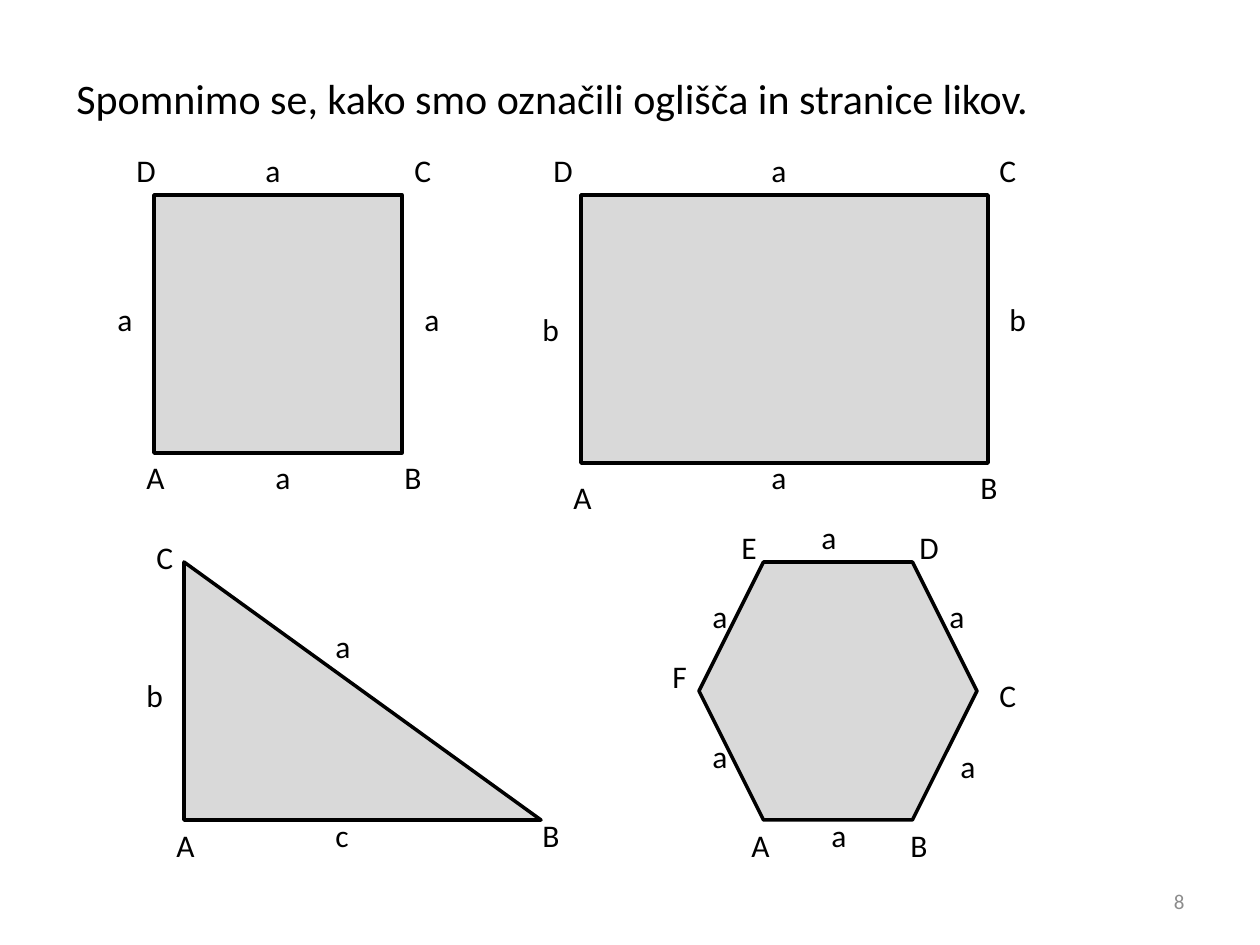
"""Build a slide that recalls how vertices and sides of plane figures are labelled."""
from dataclasses import dataclass

from pptx import Presentation
from pptx.dml.color import RGBColor
from pptx.enum.shapes import MSO_SHAPE as Shape
from pptx.enum.text import MSO_ANCHOR as Anchor, MSO_AUTO_SIZE as AutoSize, PP_ALIGN as Align
from pptx.util import Emu, Pt


@dataclass(frozen=True)
class Theme:
    font: str = "Calibri"
    ink: str = "000000"
    fill: str = "D9D9D9"
    muted: str = "8C8C8C"
    title_size: int = 24
    label_size: int = 18
    number_size: int = 12
    outline: int = 2


THEME = Theme()
PAGE_SIZE = (1260, 945)
PX_PER_INCH = 126
LABEL_HEIGHT = 50
LABEL_WIDTHS = {"A": 44, "B": 43, "C": 43, "D": 45, "E": 40, "F": 40, "a": 40, "b": 43, "c": 39}

TITLE = ("Spomnimo se, kako smo označili oglišča in stranice likov.", (64, 66, 985, 63))
PAGE_NUMBER = ("8", (903, 876, 294, 50))

FIGURES = [
    {
        "kind": Shape.RECTANGLE,
        "area": (154, 195, 248, 258),
        "vertices": [("A", 134, 452), ("B", 392, 452), ("C", 402, 145), ("D", 124, 145)],
        "sides": [("a", 263, 452), ("a", 412, 294), ("a", 253, 145), ("a", 105, 294)],
    },
    {
        "kind": Shape.RECTANGLE,
        "area": (581, 195, 407, 268),
        "vertices": [("A", 561, 472), ("B", 968, 462), ("C", 987, 145), ("D", 541, 145)],
        "sides": [("a", 759, 452), ("b", 997, 294), ("a", 759, 145), ("b", 530, 304)],
    },
    {
        "kind": Shape.RIGHT_TRIANGLE,
        "area": (184, 562, 357, 258),
        "vertices": [("A", 164, 820), ("B", 530, 810), ("C", 144, 532)],
        "sides": [("c", 323, 810), ("a", 323, 621), ("b", 134, 670)],
    },
    {
        "kind": Shape.HEXAGON,
        "area": (699, 562, 278, 258),
        "vertices": [("A", 739, 820), ("B", 898, 820), ("C", 987, 670),
                     ("D", 907, 522), ("E", 729, 522), ("F", 660, 651)],
        "sides": [("a", 819, 810), ("a", 948, 741), ("a", 937, 591),
                  ("a", 809, 512), ("a", 700, 591), ("a", 700, 731)],
    },
]


def px(length):
    return Emu(round(length * 914400 / PX_PER_INCH))


def color(value):
    return RGBColor.from_string(value)


def add_text(page, text, area, size, ink=THEME.ink):
    box = page.shapes.add_textbox(*map(px, area))
    box.text_frame.word_wrap = False
    box.text_frame.auto_size = AutoSize.SHAPE_TO_FIT_TEXT
    span = box.text_frame.paragraphs[0].add_run()
    span.text = text
    span.font.name = THEME.font
    span.font.size = Pt(size)
    span.font.color.rgb = color(ink)
    return box


def add_figure(page, kind, area):
    figure = page.shapes.add_shape(kind, *map(px, area))
    figure.shadow.inherit = False
    figure.fill.solid()
    figure.fill.fore_color.rgb = color(THEME.fill)
    figure.line.color.rgb = color(THEME.ink)
    figure.line.width = Pt(THEME.outline)


def add_page_number(page):
    text, area = PAGE_NUMBER
    frame = add_text(page, text, area, THEME.number_size, THEME.muted).text_frame
    frame.word_wrap = True
    frame.auto_size = AutoSize.NONE
    frame.vertical_anchor = Anchor.MIDDLE
    frame.paragraphs[0].alignment = Align.RIGHT


def main():
    deck = Presentation()
    deck.slide_width, deck.slide_height = map(px, PAGE_SIZE)
    page = deck.slides.add_slide(deck.slide_layouts[6])
    add_text(page, *TITLE, THEME.title_size)
    for figure in FIGURES:
        add_figure(page, figure["kind"], figure["area"])
    for figure in FIGURES:
        for name, left, top in figure["vertices"] + figure["sides"]:
            area = (left, top, LABEL_WIDTHS[name], LABEL_HEIGHT)
            add_text(page, name, area, THEME.label_size)
    add_page_number(page)
    deck.save("out.pptx")


if __name__ == "__main__":
    main()
